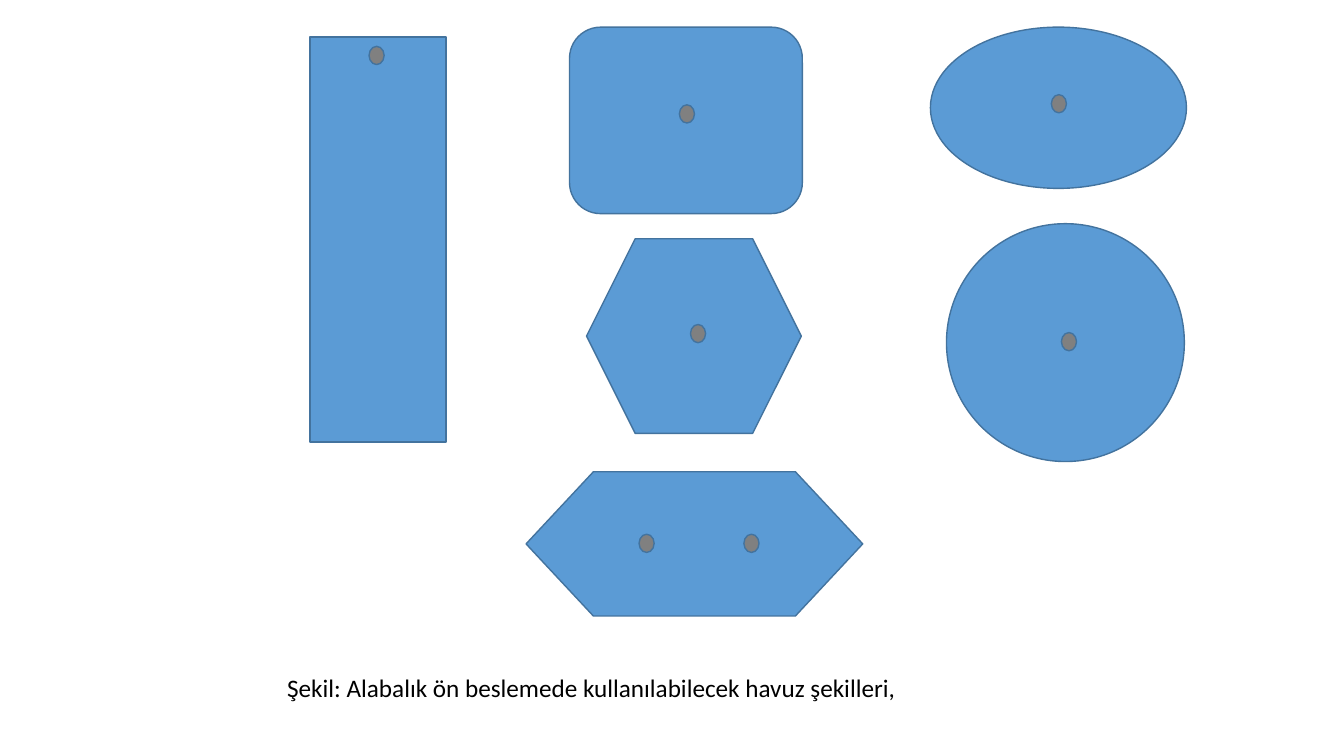
from pptx import Presentation
from pptx import util as u
from pptx.dml.color import RGBColor
from pptx.enum import shapes, text

Pt = u.Pt
KIND = shapes.MSO_SHAPE
HUES = {"pool": "5B9BD5", "edge": "43739E", "drain": "808080", "ink": "000000"}
DRAIN = (10.8, 13)

POOLS = [
    (KIND.RECTANGLE, (125.3, 122.4, 289.4, 97.2), 270, [(-1, -131.4)]),
    (KIND.ROUNDED_RECTANGLE, (406.8, 19.4, 166.3, 133.2), 0, [(0.7, -4.6)]),
    (KIND.HEXAGON, (419, 170.6, 153.4, 139), 0, [(2.9, -1.8)]),
    (KIND.OVAL, (664.6, 19.4, 182.9, 115.2), 0, [(0.3, -2.9)]),
    (KIND.FLOWCHART_PREPARATION, (375.8, 337, 240.5, 103), 0,
     [(-34.2, -0.4), (40.7, -0.4)]),
    (KIND.OVAL, (676.1, 159.8, 169.9, 169.9), 0, [(2.5, -0.7)]),
]


def hue(name):
    return RGBColor.from_string(HUES[name])


def add_form(slide, kind, box, fill):
    form = slide.shapes.add_shape(kind, *map(Pt, box))
    form.shadow.inherit = False
    form.fill.solid()
    form.fill.fore_color.rgb = hue(fill)
    form.line.color.rgb = hue("edge")
    form.line.width = Pt(1)
    return form


def add_pool(slide, kind, box, turn, drains):
    add_form(slide, kind, box, "pool").rotation = turn
    left, top, width, height = box
    wide, high = DRAIN
    for dx, dy in drains:
        x = left + (width - wide) / 2 + dx
        y = top + (height - high) / 2 + dy
        add_form(slide, KIND.OVAL, (x, y, wide, high), "drain")


def add_label(slide, box, words):
    frame = slide.shapes.add_textbox(*map(Pt, box)).text_frame
    frame.word_wrap = False
    frame.auto_size = text.MSO_AUTO_SIZE.SHAPE_TO_FIT_TEXT
    line = frame.paragraphs[0]
    line.text = words
    line.font.name = "Calibri"
    line.font.size = Pt(18)
    line.font.color.rgb = hue("ink")


def main():
    deck = Presentation()
    deck.slide_width, deck.slide_height = Pt(960), Pt(540)
    slide = deck.slides.add_slide(deck.slide_layouts[6])
    for pool in POOLS:
        add_pool(slide, *pool)
    add_label(slide, (198, 476.6, 454.3, 28.8),
              "Şekil: Alabalık ön beslemede kullanılabilecek havuz şekilleri,")
    deck.save("out.pptx")


if __name__ == "__main__":
    main()
